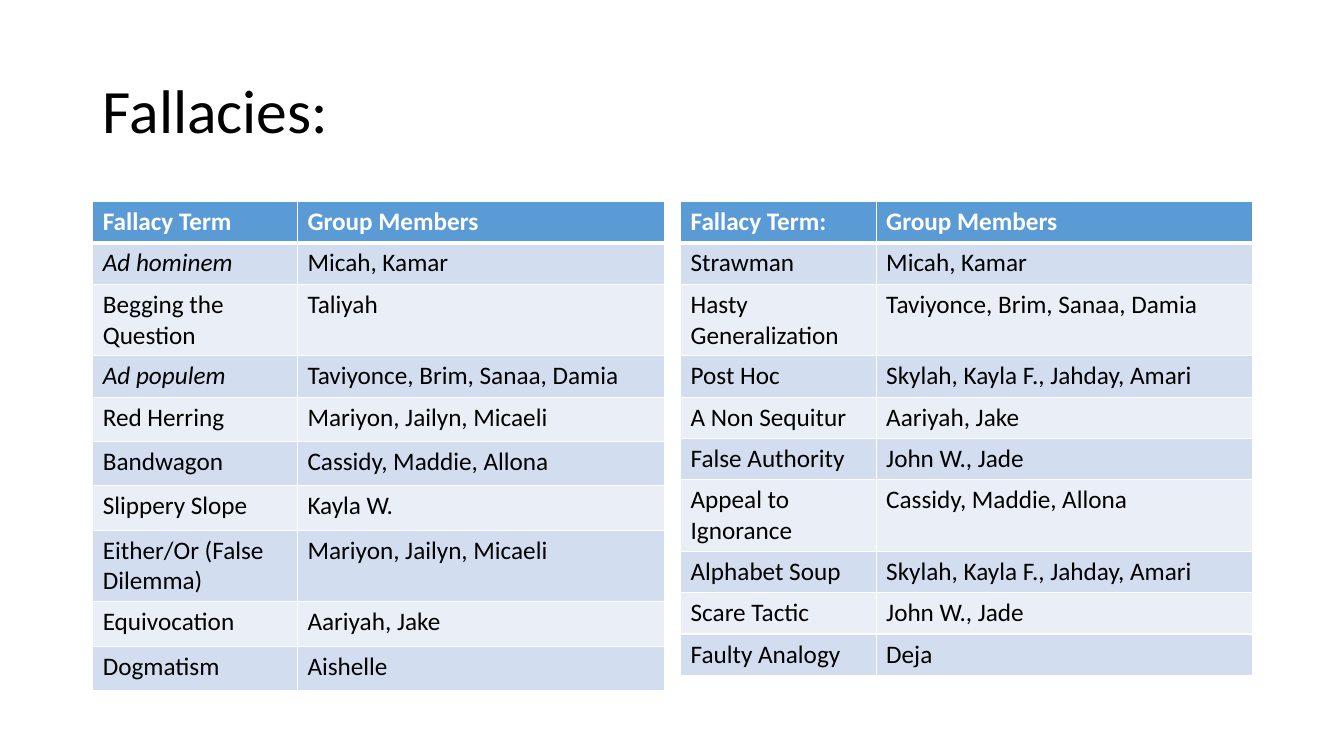
from lxml import etree
from pptx import Presentation
from pptx.dml.color import RGBColor
from pptx.enum.text import MSO_ANCHOR, PP_ALIGN
from pptx.oxml.ns import qn
from pptx.util import Inches, Pt

LEFT = PP_ALIGN.LEFT
MIDDLE = MSO_ANCHOR.MIDDLE
BLACK = RGBColor(0x00, 0x00, 0x00)
WHITE = RGBColor(0xFF, 0xFF, 0xFF)
BLUE = RGBColor(0x5B, 0x9B, 0xD5)
BANDS = [RGBColor(0xEA, 0xEF, 0xF7), RGBColor(0xD2, 0xDE, 0xEF)]
FONT = "Calibri"
ITALIC_TERMS = {"Ad hominem", "Ad populem"}

TABLES = [
    {
        "left": 0.92,
        "cols": [2.03, 3.64],
        "rows": [0.41] * 4 + [0.44] * 6,
        "cells": [
            ("Fallacy Term", "Group Members"),
            ("Ad hominem", "Micah, Kamar"),
            ("Begging the Question", "Taliyah"),
            ("Ad populem", "Taviyonce, Brim, Sanaa, Damia"),
            ("Red Herring", "Mariyon, Jailyn, Micaeli"),
            ("Bandwagon", "Cassidy, Maddie, Allona"),
            ("Slippery Slope", "Kayla W."),
            ("Either/Or (False Dilemma)", "Mariyon, Jailyn, Micaeli"),
            ("Equivocation", "Aariyah, Jake"),
            ("Dogmatism", "Aishelle"),
        ],
    },
    {
        "left": 6.75,
        "cols": [1.94, 3.73],
        "rows": [0.41] * 10,
        "cells": [
            ("Fallacy Term:", "Group Members"),
            ("Strawman", "Micah, Kamar"),
            ("Hasty Generalization", "Taviyonce, Brim, Sanaa, Damia"),
            ("Post Hoc", "Skylah, Kayla F., Jahday, Amari"),
            ("A Non Sequitur", "Aariyah, Jake"),
            ("False Authority", "John W., Jade"),
            ("Appeal to Ignorance", "Cassidy, Maddie, Allona"),
            ("Alphabet Soup", "Skylah, Kayla F., Jahday, Amari"),
            ("Scare Tactic", "John W., Jade"),
            ("Faulty Analogy", "Deja"),
        ],
    },
]


def set_borders(cell, widths):
    """Draw white borders; widths are points for left, right, top, bottom."""
    tc_pr = cell._tc.get_or_add_tcPr()
    for i, (side, width) in enumerate(zip("LRTB", widths)):
        ln = etree.Element(qn(f"a:ln{side}"), w=str(Pt(width)))
        fill = etree.SubElement(ln, qn("a:solidFill"))
        etree.SubElement(fill, qn("a:srgbClr"), val=str(WHITE))
        tc_pr.insert(i, ln)


def format_run(r, size, color, bold=False, italic=False):
    values = {"name": FONT, "size": Pt(size), "bold": bold, "italic": italic}
    for name, value in values.items():
        setattr(r.font, name, value)
    r.font.color.rgb = color


prs = Presentation()
prs.slide_width = Inches(13.33)
prs.slide_height = Inches(7.5)
s = prs.slides.add_slide(prs.slide_layouts[5])

title = s.shapes.title
title.left, title.top = Inches(0.92), Inches(0.4)
title.width, title.height = Inches(11.5), Inches(1.45)
tf = title.text_frame
tf.vertical_anchor = MIDDLE
p = tf.paragraphs[0]
p.alignment = LEFT
p.line_spacing = 0.9
r = p.add_run()
r.text = "Fallacies:"
format_run(r, 44, BLACK)

for data in TABLES:
    table = s.shapes.add_table(
        len(data["rows"]), len(data["cols"]),
        Inches(data["left"]), Inches(2),
        Inches(sum(data["cols"])), Inches(sum(data["rows"])),
    ).table
    for col, width in zip(table.columns, data["cols"]):
        col.width = Inches(width)
    for i, (height, texts) in enumerate(zip(data["rows"], data["cells"])):
        table.rows[i].height = Inches(height)
        header = i == 0
        for j, text in enumerate(texts):
            cell = table.cell(i, j)
            cell.fill.solid()
            cell.fill.fore_color.rgb = BLUE if header else BANDS[i % 2]
            set_borders(cell, (1, 1, 3 if i == 1 else 1, 3 if header else 1))
            r = cell.text_frame.paragraphs[0].add_run()
            r.text = text
            format_run(r, 18, WHITE if header else BLACK,
                       bold=header, italic=text in ITALIC_TERMS)

prs.save("out.pptx")
